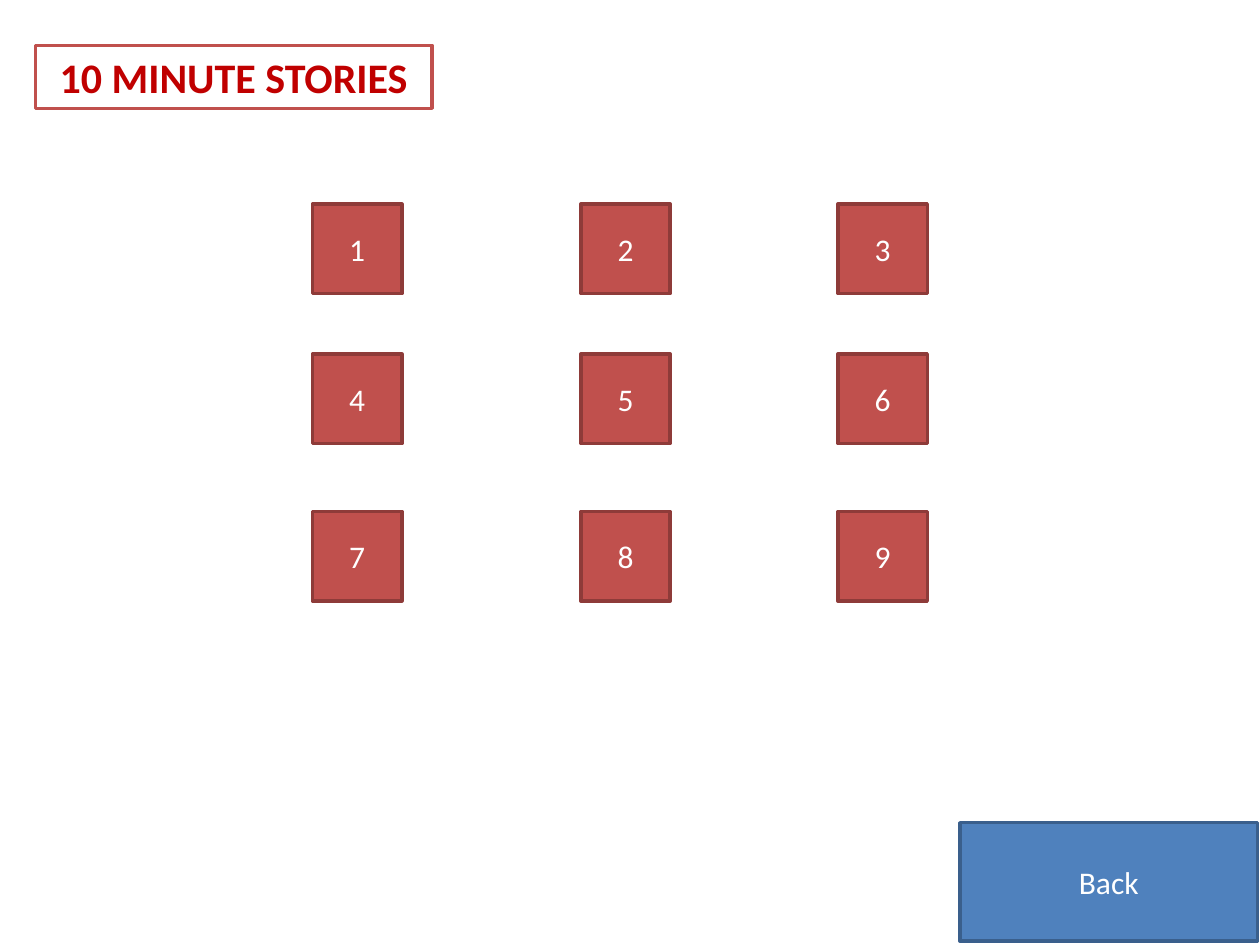
from pptx import Presentation, util as u
from pptx.dml.color import RGBColor
from pptx.enum import shapes, text

presentation = Presentation()
presentation.slide_width, presentation.slide_height = u.Inches(10), u.Inches(7.5)
slide = presentation.slides.add_slide(presentation.slide_layouts[5])  # Title Only


def color(target, value):
    """Colour a fill or a font from a hex string."""
    if hasattr(target, "solid"):
        target.solid()
        target = target.fore_color
    else:
        target = target.color
    target.rgb = RGBColor.from_string(value)


def format_box(shape, label, fill, line, font_color, anchor, **font_format):
    color(shape.fill, fill)
    color(shape.line.fill, line)
    shape.line.width = u.Pt(2)
    frame = shape.text_frame
    frame.text = label
    frame.word_wrap = True
    frame.auto_size = text.MSO_AUTO_SIZE.NONE
    frame.vertical_anchor = anchor
    paragraph = frame.paragraphs[0]
    paragraph.alignment = text.PP_ALIGN.CENTER
    for name, value in {"name": "Calibri", **font_format}.items():
        setattr(paragraph.font, name, value)
    color(paragraph.font, font_color)


# Title
title = slide.shapes.title
title.left, title.top, title.width, title.height = map(u.Inches, (0.28, 0.36, 3.15, 0.5))
format_box(title, "10 MINUTE STORIES", "FFFFFF", "C0504D", "C00000",
           text.MSO_ANCHOR.TOP, size=u.Pt(24), bold=True)

# Story buttons in a 3 x 3 grid, then the back button
columns, rows, side = (2.48, 4.61, 6.65), (1.62, 2.81, 4.06), 0.71
buttons = [
    (str(3 * row + column + 1), (left, top, side, side), "C0504D", "8E3B39")
    for row, top in enumerate(rows)
    for column, left in enumerate(columns)
]
buttons.append(("Back", (7.62, 6.53, 2.36, 0.94), "4F81BD", "3A5F8C"))

for label, box, fill, line in buttons:
    button = slide.shapes.add_shape(shapes.MSO_SHAPE.RECTANGLE, *map(u.Inches, box))
    button.shadow.inherit = False
    format_box(button, label, fill, line, "FFFFFF", text.MSO_ANCHOR.MIDDLE, size=u.Pt(18))

presentation.save("out.pptx")
